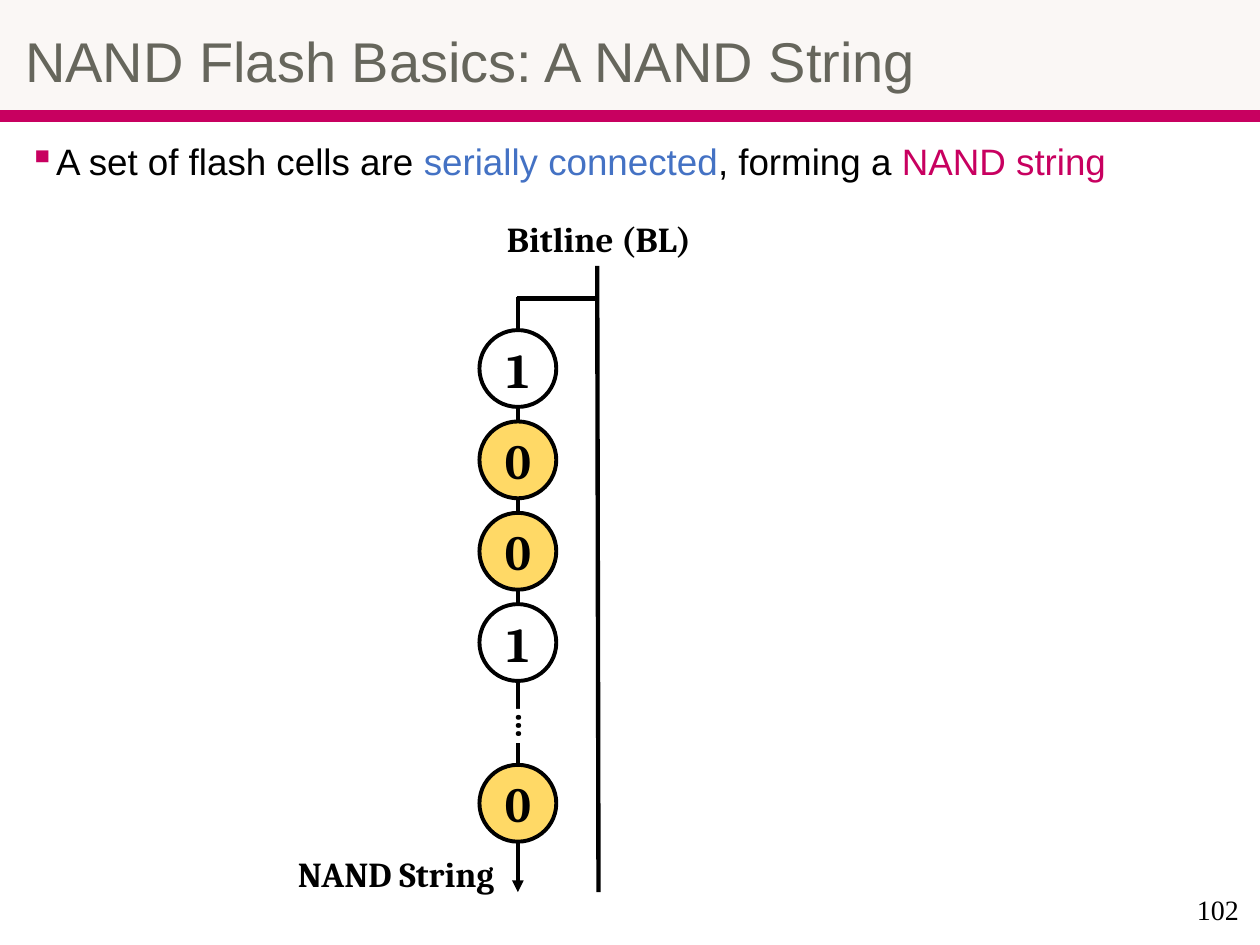
from typing import NamedTuple

from lxml import etree
from pptx import Presentation
from pptx import util as u
from pptx.dml import color
from pptx.enum import shapes, text
from pptx.oxml import ns

INK, PINK, BLUE, GOLD, WHITE = "000000", "C80060", "4472C4", "FFD966", "FFFFFF"
SIZE = 0.61
MID = 4.11


class Cell(NamedTuple):
    bit: str
    top: float


class Wire(NamedTuple):
    x1: float
    y1: float
    x2: float
    y2: float
    width: float = 2.5
    arrow: bool = False


class Label(NamedTuple):
    words: str
    box: tuple[float, float, float, float]
    turn: int = 0
    fill: str = ""


def rgb(code: str) -> color.RGBColor:
    return color.RGBColor.from_string(code)


def paint(shape, fill: str, line: str = "", width: float = 1) -> None:
    shape.shadow.inherit = False
    shape.fill.solid()
    shape.fill.fore_color.rgb = rgb(fill)
    if line:
        shape.line.color.rgb = rgb(line)
        shape.line.width = u.Pt(width)
    else:
        shape.line.fill.background()


def add_block(slide, kind, box, fill: str, line: str = "", width: float = 1):
    shape = slide.shapes.add_shape(kind, *map(u.Inches, box))
    paint(shape, fill, line, width)
    return shape


def add_box(slide, box):
    return slide.shapes.add_textbox(*map(u.Inches, box))


def write(shape, *runs, size=20, font="Cambria", bold=False, align="LEFT",
          anchor="MIDDLE", inset=(0, 0, 0, 0), spacing=1.0, bullet="") -> None:
    frame = shape.text_frame
    frame.word_wrap = True
    frame.vertical_anchor = text.MSO_ANCHOR[anchor]
    (frame.margin_left, frame.margin_top,
     frame.margin_right, frame.margin_bottom) = map(u.Inches, inset)
    para = frame.paragraphs[0]
    para.alignment = text.PP_ALIGN[align]
    para.line_spacing = spacing
    if bullet:
        props = para._p.get_or_add_pPr()
        props.set("marL", str(u.Inches(0.19)))
        props.set("indent", str(u.Inches(-0.19)))
        tint = etree.SubElement(props, ns.qn("a:buClr"))
        etree.SubElement(tint, ns.qn("a:srgbClr"), val=PINK)
        etree.SubElement(props, ns.qn("a:buChar"), char=bullet)
    for words, shade in runs:
        run = para.add_run()
        run.text = words
        run.font.size = u.Pt(size)
        run.font.name = font
        run.font.bold = bold
        run.font.color.rgb = rgb(shade)


def draw_wire(slide, wire: Wire) -> None:
    ends = map(u.Inches, (wire.x1, wire.y1, wire.x2, wire.y2))
    link = slide.shapes.add_connector(shapes.MSO_CONNECTOR.STRAIGHT, *ends)
    link.line.color.rgb = rgb(INK)
    link.line.width = u.Pt(wire.width)
    if wire.arrow:
        etree.SubElement(link.line._get_or_add_ln(), ns.qn("a:tailEnd"),
                         type="triangle")
    etree.SubElement(link._element.spPr, ns.qn("a:effectLst"))


def draw_cell(slide, cell: Cell) -> None:
    fill = WHITE if cell.bit == "1" else GOLD
    box = (MID - SIZE / 2, cell.top, SIZE, SIZE)
    disc = add_block(slide, shapes.MSO_SHAPE.OVAL, box, fill, INK, 2.25)
    write(disc, (cell.bit, INK), size=28, bold=True, align="CENTER")


def draw_label(slide, label: Label) -> None:
    if label.fill:
        shape = add_block(slide, shapes.MSO_SHAPE.RECTANGLE, label.box, label.fill)
    else:
        shape = add_box(slide, label.box)
    shape.rotation = label.turn
    write(shape, (label.words, INK), bold=True, align="CENTER")


def draw_frame(slide) -> None:
    rect = shapes.MSO_SHAPE.RECTANGLE
    add_block(slide, rect, (0, 0.88, 10, 0.08), PINK, PINK)
    title = add_block(slide, rect, (0, 0, 10, 0.87), "FAF7F5", "FAF7F5", 0.75)
    write(title, ("NAND Flash Basics: A NAND String", "66665C"), size=32,
          font="Arial", inset=(0.2, 0.2, 0.1, 0.05), spacing=0.9)
    body = add_box(slide, (0.13, 1.09, 9.74, 5.99))
    write(body, ("A set of flash cells are ", INK), ("serially connected", BLUE),
          (", forming a ", INK), ("NAND string", PINK), size=21, font="Arial",
          anchor="TOP", inset=(0.1, 0.05, 0.1, 0.05), spacing=0.9, bullet="▪")
    page = add_box(slide, (7.6, 6.97, 2.33, 0.5))
    write(page, ("102", INK), size=16, font="Times New Roman", align="RIGHT",
          inset=(0.1, 0.05, 0.1, 0.05))


def main() -> None:
    deck = Presentation()
    deck.slide_width, deck.slide_height = u.Inches(10), u.Inches(7.5)
    slide = deck.slides.add_slide(deck.slide_layouts[6])
    draw_frame(slide)
    draw_wire(slide, Wire(MID, 2.36, MID, 7.08, 2.25, True))
    cells = [Cell(bit, 2.62 + 0.725 * row) for row, bit in enumerate("1001")]
    for cell in cells + [Cell("0", 6.07)]:
        draw_cell(slide, cell)
    for wire in (Wire(4.1, 2.37, 4.75, 2.37), Wire(4.75, 7.08, 4.74, 2.11)):
        draw_wire(slide, wire)
    for label in (Label("Bitline (BL)", (3.12, 1.72, 3.27, 0.34)),
                  Label("…", (3.89, 5.59, 0.27, 0.34), 270, WHITE),
                  Label("NAND String", (1.51, 6.76, 3.27, 0.34))):
        draw_label(slide, label)
    deck.save("out.pptx")


if __name__ == "__main__":
    main()
